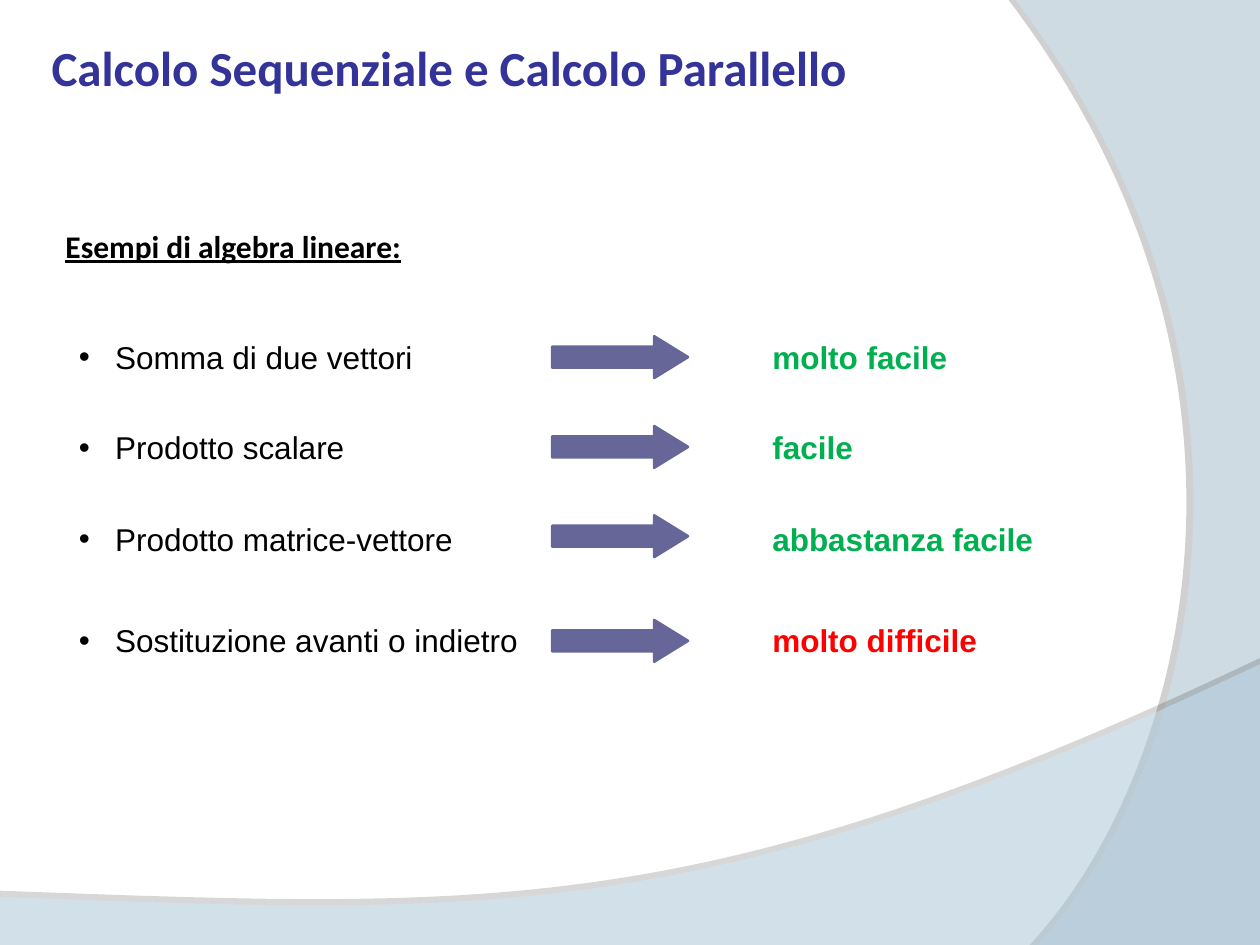
import pptx
import pptx.dml.color
import pptx.enum.shapes
import pptx.oxml
import pptx.oxml.ns
import pptx.util
from pptx.util import Cm

COLORS = {
    "title": "333399",
    "text": "000000",
    "arrow": "666699",
    "easy": "00B050",
    "hard": "FF0000",
    "wave": "CCECFF",
    "shadow": "000000",
}

# Problem, difficulty, colour, top of the text, top of the arrow (cm)
EXAMPLES = [
    ("Somma di due vettori", "molto facile", "easy", 6.68, 6.78),
    ("Prodotto scalare", "facile", "easy", 8.51, 8.59),
    ("Prodotto matrice-vettore", "abbastanza facile", "easy", 10.36, 10.39),
    ("Sostituzione avanti o indietro", "molto difficile", "hard", 12.4, 12.5),
]


def rgb(name):
    return pptx.dml.color.RGBColor.from_string(COLORS[name])


def parse_xml(xml):
    return pptx.oxml.parse_xml(xml.replace(">", f" {pptx.oxml.ns.nsdecls('a')}>", 1))


def add_text(shapes, text, left, top, width, height, color,
             size=18, font="Arial", bold=False, underline=False, bullet=False):
    box = shapes.add_textbox(Cm(left), Cm(top), Cm(width), Cm(height))
    box.text_frame.word_wrap = True
    paragraph = box.text_frame.paragraphs[0]
    paragraph.text = text
    if bullet:
        properties = paragraph._p.get_or_add_pPr()
        properties.set("marL", str(Cm(0.73)))
        properties.set("indent", str(-Cm(0.73)))
        properties.append(parse_xml('<a:buFont typeface="Arial"></a:buFont>'))
        properties.append(parse_xml('<a:buChar char="•"></a:buChar>'))
    style = paragraph.runs[0].font
    style.name = font
    style.size = pptx.util.Pt(size)
    style.bold = bold
    style.underline = underline
    style.color.rgb = rgb(color)


def add_arrow(shapes, top):
    arrow = shapes.add_shape(pptx.enum.shapes.MSO_SHAPE.RIGHT_ARROW,
                             Cm(11.13), Cm(top), Cm(2.74), Cm(0.84))
    arrow.adjustments[0] = 0.5
    arrow.adjustments[1] = 0.81
    arrow.shadow.inherit = False
    arrow.fill.solid()
    arrow.fill.fore_color.rgb = rgb("arrow")
    arrow.line.color.rgb = rgb("arrow")
    arrow.line.width = pptx.util.Pt(1.5)


def add_example(slide, problem, difficulty, color, text_top, arrow_top):
    shapes = slide.shapes.add_group_shape().shapes
    add_text(shapes, problem, 1.34, text_top, 9.47, 1.02, "text", bullet=True)
    add_arrow(shapes, arrow_top)
    add_text(shapes, difficulty, 15.32, text_top, 6.07, 1.02, color, bold=True)


def bezier(start, control1, control2, end, steps=60):
    """Points along a cubic curve, both ends included."""
    points = []
    for step in range(steps + 1):
        t = step / steps
        weights = ((1 - t) ** 3, 3 * t * (1 - t) ** 2, 3 * t * t * (1 - t), t ** 3)
        points.append(tuple(
            sum(w * value for w, value in zip(weights, axis))
            for axis in zip(start, control1, control2, end)))
    return points


def add_wave(slide, points, opacity, shadow_opacity, distance, direction):
    outline = [(Cm(x), Cm(y)) for x, y in points]
    builder = slide.shapes.build_freeform(*outline[0], scale=1.0)
    builder.add_line_segments(outline[1:], close=True)
    wave = builder.convert_to_shape()
    wave.fill.solid()
    wave.fill.fore_color.rgb = rgb("wave")
    wave.line.fill.background()
    # Transparent fill and a hard offset shadow
    fill_color = wave._element.spPr.find(".//" + pptx.oxml.ns.qn("a:srgbClr"))
    fill_color.append(parse_xml(f'<a:alpha val="{opacity * 1000}"></a:alpha>'))
    wave._element.spPr.append(parse_xml(
        f'<a:effectLst><a:outerShdw blurRad="0" dist="{pptx.util.Pt(distance)}" '
        f'dir="{direction * 60000}" algn="ctr" rotWithShape="0">'
        f'<a:srgbClr val="{COLORS["shadow"]}"><a:alpha val="{shadow_opacity * 1000}"/>'
        '</a:srgbClr></a:outerShdw></a:effectLst>'))


def main():
    deck = pptx.Presentation()
    deck.slide_width, deck.slide_height = Cm(25.4), Cm(19.05)
    slide = deck.slides.add_slide(deck.slide_layouts[6])

    # Headings
    add_text(slide.shapes, "Esempi di algebra lineare:", 1.07, 4.45, 8.46, 1.02,
             "text", font="Calibri", bold=True, underline=True)
    add_text(slide.shapes, "Calcolo Sequenziale e Calcolo Parallello",
             0.79, 0.64, 20.17, 1.45, "title", size=28, font="Calibri", bold=True)

    # Problems and how easily they run in parallel
    for example in EXAMPLES:
        add_example(slide, *example)

    # Decorative waves: right side, then bottom
    right_edge = bezier((20.9, 19.05), (24.03, 15.7), (26.31, 7.49), (20.32, -0.2))
    add_wave(slide, [(25.83, -0.2), (25.83, 19.05)] + right_edge, 40, 45, 4, 180)
    bottom_edge = bezier((25.4, 13.39), (14.2, 18.72), (9.93, 18.44), (0, 18.08))
    add_wave(slide, [(0, 19.25), (25.4, 19.25)] + bottom_edge, 45, 35, 3.5, 270)

    deck.save("out.pptx")


if __name__ == "__main__":
    main()
